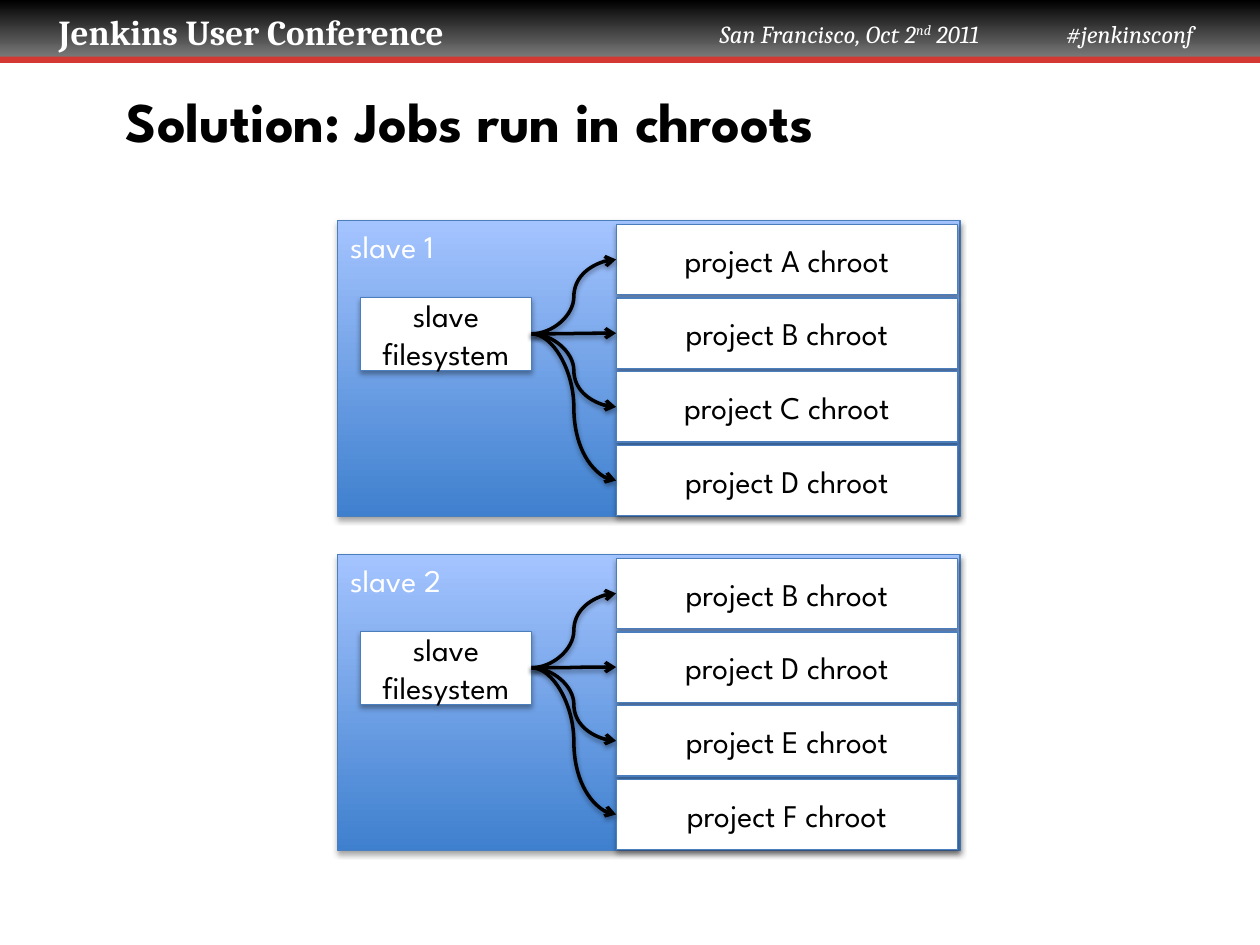
from lxml import etree
from pptx import Presentation
from pptx import util as u
from pptx.dml.color import RGBColor
from pptx.enum import shapes, text
from pptx.oxml.ns import qn

Pt = u.Pt
BODY, HEADER = "League Spartan", "Cambria"
BLACK, WHITE, BORDER = "000000", "FFFFFF", "4B7EBC"

# Panels: label, chroots
SLAVES = [
    ("slave 1", "ABCD"),
    ("slave 2", "BDEF"),
]
PANEL_TOP, PANEL_PITCH = 126, 190.8
CHROOT_PITCH = 42.1


def rgb(color):
    return RGBColor.from_string(color)


def add_shadow(shape, opacity, distance):
    """Soft black shadow straight below the shape."""
    effects = etree.SubElement(shape._element.spPr, qn("a:effectLst"))
    shadow = etree.SubElement(
        effects, qn("a:outerShdw"), blurRad=str(Pt(3.1)),
        dist=str(Pt(distance)), dir="5400000", rotWithShape="0")
    color = etree.SubElement(shadow, qn("a:srgbClr"), val=BLACK)
    etree.SubElement(color, qn("a:alpha"), val=str(opacity * 1000))


def add_rect(slide, box, fill, line=None):
    """Rectangle; a pair of fill colours gives a top-to-bottom gradient."""
    shape = slide.shapes.add_shape(
        shapes.MSO_SHAPE.RECTANGLE, *[Pt(value) for value in box])
    if isinstance(fill, tuple):
        shape.fill.gradient()
        shape.fill.gradient_angle = 270
        for stop, color, position in zip(shape.fill.gradient_stops, fill, (0, 1)):
            stop.color.rgb = rgb(color)
            stop.position = position
    else:
        shape.fill.solid()
        shape.fill.fore_color.rgb = rgb(fill)
    if line:
        shape.line.color.rgb = rgb(line)
        shape.line.width = Pt(0.75)
        add_shadow(shape, 35, 1.8)
    else:
        shape.line.fill.background()
        shape.shadow.inherit = False
    return shape


def write(shape, lines, size, color, font=BODY, bold=False, italic=False,
          align=text.PP_ALIGN.LEFT, anchor=text.MSO_ANCHOR.TOP):
    frame = shape.text_frame
    frame.word_wrap = True
    frame.vertical_anchor = anchor
    frame.text = lines
    for paragraph in frame.paragraphs:
        paragraph.alignment = align
        paragraph.font.name = font
        paragraph.font.size = Pt(size)
        paragraph.font.bold = bold
        paragraph.font.italic = italic
        paragraph.font.color.rgb = rgb(color)
    return frame


def add_text(slide, box, lines, *style, **options):
    shape = slide.shapes.add_textbox(*[Pt(value) for value in box])
    return write(shape, lines, *style, **options)


def add_white_box(slide, box, lines):
    shape = add_rect(slide, box, WHITE, BORDER)
    write(shape, lines, 18, BLACK, align=text.PP_ALIGN.CENTER,
          anchor=text.MSO_ANCHOR.MIDDLE)
    return shape


def add_arrow(slide, source, target):
    """Curved arrow from the right side of source to the left of target."""
    connector = slide.shapes.add_connector(
        shapes.MSO_CONNECTOR.CURVE,
        source.left + source.width, source.top + source.height // 2,
        target.left, target.top + target.height // 2)
    connector.begin_connect(source, 3)
    connector.end_connect(target, 1)
    connector.line.color.rgb = rgb(BLACK)
    connector.line.width = Pt(2)
    etree.SubElement(connector.line._get_or_add_ln(), qn("a:tailEnd"), type="arrow")
    add_shadow(connector, 38, 1.6)


def add_header(slide):
    band = add_rect(slide, (0, 0, 720, 34.6), (BLACK, "808080"))
    frame = write(band, "Jenkins User Conference", 20, WHITE, HEADER, bold=True)
    frame.margin_left, frame.margin_top = Pt(33.6), Pt(6)
    add_rect(slide, (0, 32.4, 720, 3.6), "D33833")

    style = dict(font=HEADER, italic=True, align=text.PP_ALIGN.RIGHT)
    date = add_text(slide, (352.8, 7.2, 213.8, 24.5), "San Francisco, Oct 2",
                    14, WHITE, **style)
    ordinal, year = (date.paragraphs[0].add_run() for _ in range(2))
    ordinal.text, year.text = "nd", " 2011"
    ordinal._r.get_or_add_rPr().set("baseline", "30000")
    add_text(slide, (580, 7.2, 109, 24.5), "#jenkinsconf", 14, WHITE, **style)


def add_slave(slide, top, label, projects):
    panel = add_rect(slide, (193, top, 355.7, 169.2), ("A4C4FF", "3F80CE"), BORDER)
    write(panel, label, 18, WHITE)
    chroots = [
        add_white_box(slide, (352.1, top + 2.2 + row * CHROOT_PITCH, 195.1, 40.3),
                      f"project {project} chroot")
        for row, project in enumerate(projects)]
    filesystem = add_white_box(slide, (205.9, top + 43.9, 97.9, 41.8),
                               "slave\nfilesystem")
    for chroot in chroots:
        add_arrow(slide, filesystem, chroot)


def main():
    presentation = Presentation()
    presentation.slide_width, presentation.slide_height = Pt(720), Pt(540)
    slide = presentation.slides.add_slide(presentation.slide_layouts[6])

    # Header and title
    add_header(slide)
    add_text(slide, (64.8, 46.1, 619.2, 56.9), "Solution: Jobs run in chroots",
             32, BLACK, bold=True)

    # One panel per slave
    for index, (label, projects) in enumerate(SLAVES):
        add_slave(slide, PANEL_TOP + index * PANEL_PITCH, label, projects)

    presentation.save("out.pptx")


if __name__ == "__main__":
    main()
